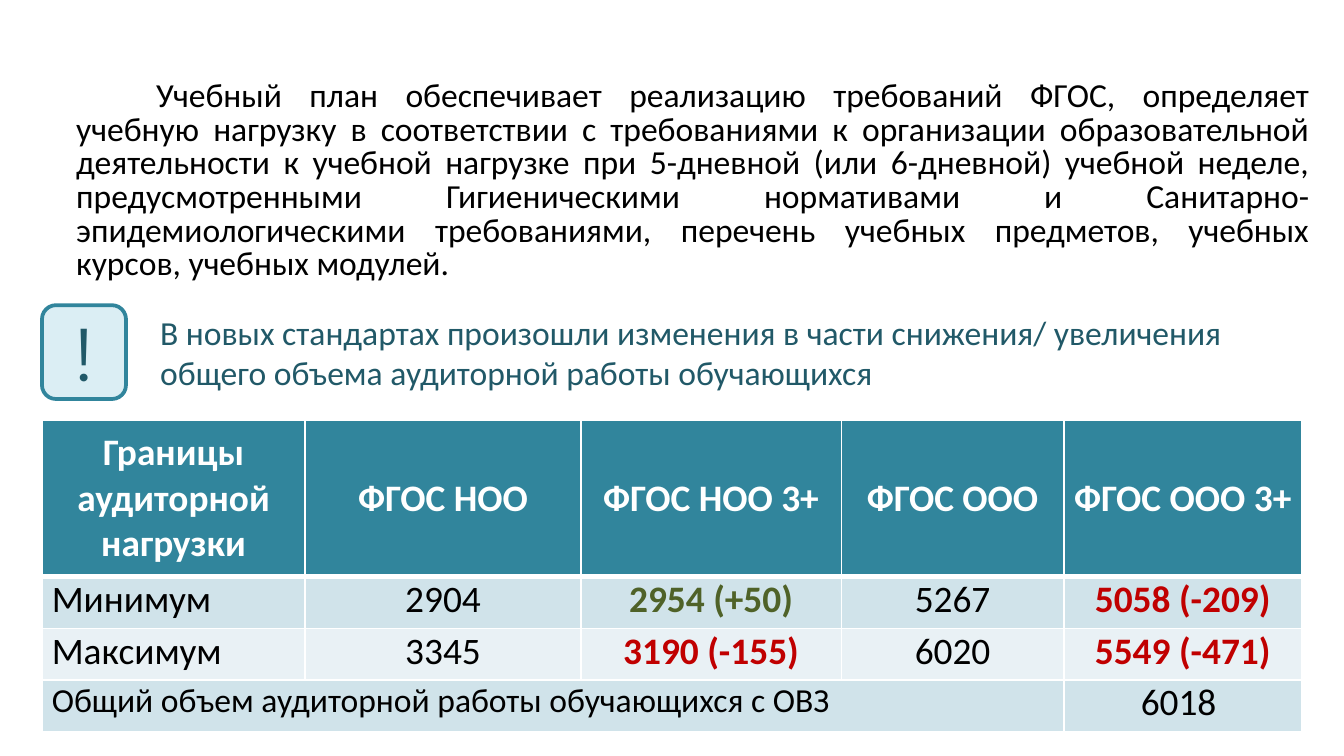
import pptx
import pptx.dml.color
import pptx.enum.shapes
import pptx.enum.text
import pptx.oxml
import pptx.oxml.ns
import pptx.util

PX = 9525  # 96 px to the inch
ALIGN = pptx.enum.text.PP_ALIGN
ANCHOR = pptx.enum.text.MSO_ANCHOR
TEAL, DARK_TEAL, RED, GREEN = "31859C", "215968", "C00000", "4F6228"


def color(value):
    return pptx.dml.color.RGBColor.from_string(value)


def write(frame, text, size, value, align=ALIGN.LEFT, bold=False, face="Calibri"):
    frame.word_wrap = True
    para = frame.paragraphs[0]
    para.text = text
    para.alignment = align
    para.font.size = pptx.util.Pt(size)
    para.font.name = face
    para.font.bold = bold
    para.font.color.rgb = color(value)
    return para


deck = pptx.Presentation()
deck.slide_width, deck.slide_height = 960 * PX, 540 * PX
page = deck.slides.add_slide(deck.slide_layouts[6])

# Callout text
box = page.shapes.add_textbox(105 * PX, 218 * PX, 825 * PX, 68 * PX)
write(box.text_frame, "В новых стандартах произошли изменения в части снижения/ увеличения "
      "общего объема аудиторной работы обучающихся", 18, DARK_TEAL)

# Exclamation badge
badge = page.shapes.add_shape(pptx.enum.shapes.MSO_SHAPE.ROUNDED_RECTANGLE,
                              30 * PX, 218 * PX, 60 * PX, 67 * PX)
badge.shadow.inherit = False
badge.fill.solid()
badge.fill.fore_color.rgb = color("DBEEF4")
badge.line.color.rgb = color(TEAL)
badge.line.width = pptx.util.Pt(2)
badge.text_frame.vertical_anchor = ANCHOR.MIDDLE
write(badge.text_frame, "!", 40, DARK_TEAL, ALIGN.CENTER, face="Montserrat")

# Workload table
rows = [
    ["Границы аудиторной нагрузки", "ФГОС НОО", "ФГОС НОО 3+", "ФГОС ООО", "ФГОС ООО 3+"],
    ["Минимум", "2904", "2954 (+50)", "5267", "5058 (-209)"],
    ["Максимум", "3345", "3190 (-155)", "6020", "5549 (-471)"],
    ["Общий объем аудиторной работы обучающихся с ОВЗ", "", "", "", "6018 "],
]
widths = [188, 197, 186, 159, 170]
heights = [112, 37, 37, 37]
row_fills = [TEAL, "D0E3EA", "E9F1F5", "D0E3EA"]
table = page.shapes.add_table(len(rows), len(widths), 30 * PX, 300 * PX,
                              sum(widths) * PX, sum(heights) * PX).table
for column, width in zip(table.columns, widths):
    column.width = width * PX
for row, height in zip(table.rows, heights):
    row.height = height * PX
table.cell(3, 0).merge(table.cell(3, 3))

for r, texts in enumerate(rows):
    for c, text in enumerate(texts):
        cell = table.cell(r, c)
        cell.margin_left = cell.margin_right = 7 * PX
        cell.margin_top = cell.margin_bottom = 0
        # White borders, thicker under the header
        for side in "LRTB":
            thick = (r, side) in ((0, "B"), (1, "T"))
            cell._tc.get_or_add_tcPr().append(pptx.oxml.parse_xml(
                f'<a:ln{side} {pptx.oxml.ns.nsdecls("a")} w="{38100 if thick else 12700}">'
                f'<a:solidFill><a:srgbClr val="FFFFFF"/></a:solidFill></a:ln{side}>'))
        cell.fill.solid()
        cell.fill.fore_color.rgb = color(row_fills[r])
        if not text:
            continue
        changed = "(" in text
        value = "FFFFFF" if r == 0 else "000000"
        if changed:
            value = GREEN if "+" in text else RED
        if r == 0:
            cell.vertical_anchor = ANCHOR.MIDDLE
        write(cell.text_frame, text, 18 if cell.is_merge_origin else 20, value,
              ALIGN.LEFT if r and c == 0 else ALIGN.CENTER, bold=r == 0 or changed)

# Introductory paragraph
box = page.shapes.add_textbox(45 * PX, 53 * PX, 900 * PX, 156 * PX)
para = write(
    box.text_frame,
    "Учебный план обеспечивает реализацию требований ФГОС, определяет учебную нагрузку "
    "в соответствии с требованиями к организации образовательной деятельности к учебной "
    "нагрузке при 5-дневной (или 6-дневной) учебной неделе, предусмотренными "
    "Гигиеническими нормативами и Санитарно-эпидемиологическими требованиями, перечень "
    "учебных предметов, учебных курсов, учебных модулей.",
    18, "000000", ALIGN.JUSTIFY)
para.line_spacing = pptx.util.Pt(18)
para._p.get_or_add_pPr().set("indent", str(57 * PX))

deck.save("out.pptx")
